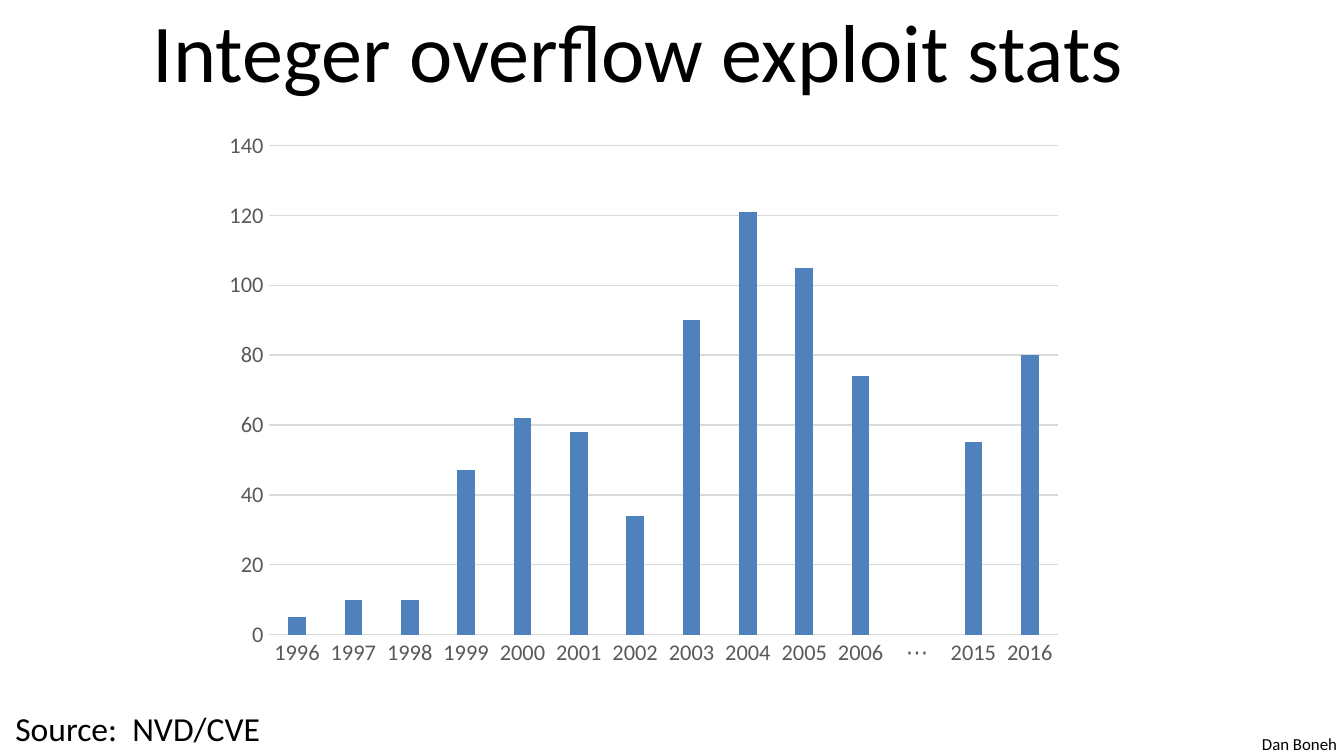
from pptx import Presentation
from pptx.chart.data import CategoryChartData
from pptx.dml.color import RGBColor
from pptx.enum.chart import XL_CHART_TYPE, XL_TICK_MARK
from pptx.enum.text import MSO_ANCHOR, PP_ALIGN
from pptx.util import Cm, Pt

COLUMNS = XL_CHART_TYPE.COLUMN_CLUSTERED
NO_TICKS = XL_TICK_MARK.NONE
MIDDLE, TOP = MSO_ANCHOR.MIDDLE, MSO_ANCHOR.TOP
CENTER, LEFT = PP_ALIGN.CENTER, PP_ALIGN.LEFT

FONT = "Calibri"
COLORS = {"text": "000000", "axis": "595959", "grid": "D9D9D9", "bar": "4F81BD"}
EXPLOITS = {
    "1996": 5, "1997": 10, "1998": 10, "1999": 47, "2000": 62,
    "2001": 58, "2002": 34, "2003": 90, "2004": 121, "2005": 105,
    "2006": 74, "⋯": None, "2015": 55, "2016": 80,
}


def color(name):
    return RGBColor.from_string(COLORS[name])


def style_font(font, size, color_name):
    font.name = FONT
    font.size = Pt(size)
    font.color.rgb = color(color_name)


def style_line(line):
    line.color.rgb = color("grid")
    line.width = Pt(0.75)


def add_text(slide, text, box, size, alignment=LEFT, anchor=TOP, wrap=False):
    shape = slide.shapes.add_textbox(*map(Cm, box))
    frame = shape.text_frame
    frame.word_wrap = wrap
    frame.vertical_anchor = anchor
    paragraph = frame.paragraphs[0]
    paragraph.text = text
    paragraph.alignment = alignment
    style_font(paragraph.font, size, "text")


def style_axis(axis):
    axis.major_tick_mark = NO_TICKS
    axis.minor_tick_mark = NO_TICKS
    style_font(axis.tick_labels.font, 12, "axis")


def add_column_chart(slide, values, box):
    data = CategoryChartData()
    data.categories = list(values)
    data.add_series("Series 1", list(values.values()))
    chart = slide.shapes.add_chart(COLUMNS, *map(Cm, box), data).chart
    chart.has_legend = False
    chart.has_title = False
    style_font(chart.font, 10, "text")

    style_axis(chart.category_axis)
    style_line(chart.category_axis.format.line)
    style_axis(chart.value_axis)
    chart.value_axis.format.line.fill.background()
    style_line(chart.value_axis.major_gridlines.format.line)

    plot = chart.plots[0]
    plot.vary_by_categories = False
    plot.gap_width = 219
    plot.overlap = -27
    fill = plot.series[0].format.fill
    fill.solid()
    fill.fore_color.rgb = color("bar")


def main():
    presentation = Presentation()
    presentation.slide_width = Cm(25.4)
    presentation.slide_height = Cm(14.29)
    slide = presentation.slides.add_slide(presentation.slide_layouts[6])

    add_text(slide, "Dan Boneh", (23.6, 13.74, 1.93, 0.64), 9)
    add_text(slide, "Source:  NVD/CVE", (0, 13.26, 5.21, 1.02), 18, CENTER)
    add_text(slide, "Integer overflow exploit stats", (0.64, -0.25, 22.86, 2.39),
             44, CENTER, MIDDLE, wrap=True)
    add_column_chart(slide, EXPLOITS, (4.01, 2.29, 16.31, 10.52))

    presentation.save("out.pptx")


if __name__ == "__main__":
    main()
